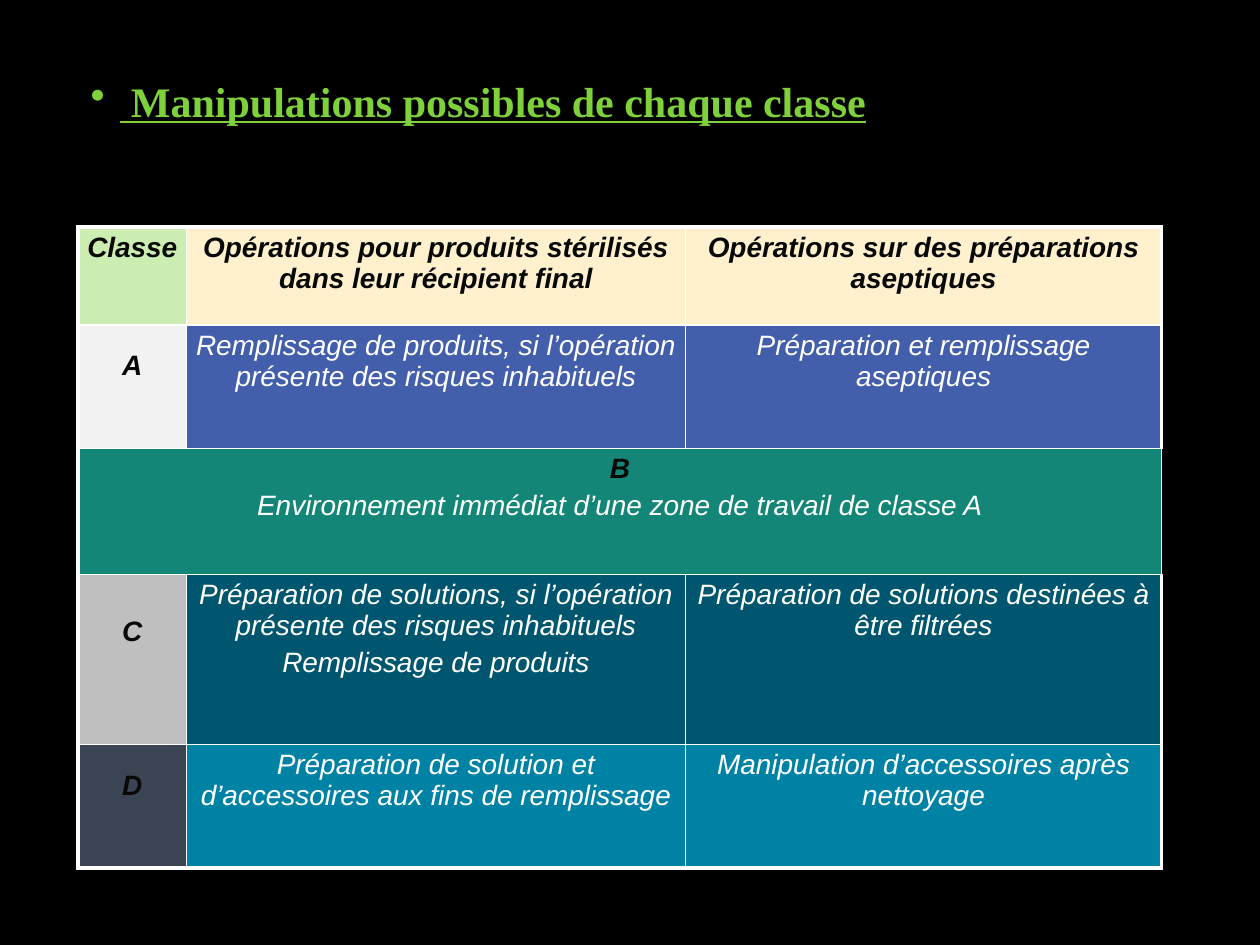
from lxml.etree import SubElement
from pptx import Presentation
from pptx.dml.color import RGBColor
from pptx.enum.text import MSO_ANCHOR, PP_ALIGN
from pptx.oxml.ns import qn
from pptx.util import Inches, Pt

WHITE = "FFFFFF"
INK = "080808"
COLUMN_WIDTHS = [0.86, 3.96, 3.78]
ROW_HEIGHTS = [0.78, 0.98, 1, 1.35, 0.98]
HEADINGS = [
    "Classe",
    "Opérations pour produits stérilisés dans leur récipient final",
    "Opérations sur des préparations aseptiques",
]
CLASS_ROWS = [
    (1, "A", "F2F2F2", "435EAA", 0.2, [
        ["Remplissage de produits, si l’opération présente des risques inhabituels"],
        ["Préparation et remplissage aseptiques"],
    ]),
    (3, "C", "BFBFBF", "00566E", 0.33, [
        ["Préparation de solutions, si l’opération présente des risques inhabituels",
         "Remplissage de produits"],
        ["Préparation de solutions destinées à être filtrées"],
    ]),
    (4, "D", "3B4453", "0082A5", 0.2, [
        ["Préparation de solution et d’accessoires aux fins de remplissage"],
        ["Manipulation d’accessoires après nettoyage"],
    ]),
]


def color(value):
    """Return the colour for a hex string."""
    return RGBColor.from_string(value)


def add_title(slide, text):
    """Format the title placeholder as an underlined bullet line."""
    title = slide.shapes.title
    title.left, title.top = Inches(0.62), Inches(0.55)
    title.width, title.height = Inches(6.72), Inches(0.5)
    frame = title.text_frame
    frame.text = text
    frame.word_wrap = True
    frame.vertical_anchor = MSO_ANCHOR.TOP
    paragraph = frame.paragraphs[0]
    paragraph.alignment = PP_ALIGN.LEFT
    font = paragraph.font
    font.name, font.size = "Times New Roman", Pt(24)
    font.bold = font.underline = True
    font.color.rgb = color("7FD13B")
    bullet = SubElement(paragraph._p.get_or_add_pPr(), qn("a:buChar"))
    bullet.set("char", "•")
    paragraph._p.pPr.insert_element_before(bullet, "a:defRPr")


def set_borders(cell, widths):
    """Draw white cell borders with the given width for each side."""
    properties = cell._tc.get_or_add_tcPr()
    for side, width in zip("LRTB", widths):
        line = SubElement(properties, qn(f"a:ln{side}"), w=str(Pt(width)))
        fill = SubElement(line, qn("a:solidFill"))
        SubElement(fill, qn("a:srgbClr"), val=WHITE)


def fill_cell(cell, lines, background, top=0.04):
    """Write centred italic lines, each a text and whether it is strong."""
    cell.fill.solid()
    cell.fill.fore_color.rgb = color(background)
    cell.margin_left = cell.margin_right = Inches(0.07)
    cell.margin_top, cell.margin_bottom = Inches(top), Inches(0.04)
    frame = cell.text_frame
    frame.text = "\n".join(text for text, _ in lines)
    for index, (paragraph, (_, strong)) in enumerate(zip(frame.paragraphs, lines)):
        paragraph.alignment = PP_ALIGN.CENTER
        paragraph.space_before = Pt(3 if index else 0)
        font = paragraph.font
        font.name, font.size = "Arial", Pt(16)
        font.italic, font.bold = True, strong
        font.color.rgb = color(INK if strong else WHITE)


def add_grid(slide):
    """Add the table with its sizes and borders and return it."""
    rows, columns = len(ROW_HEIGHTS), len(COLUMN_WIDTHS)
    table = slide.shapes.add_table(
        rows, columns, Inches(0.62), Inches(1.8),
        Inches(sum(COLUMN_WIDTHS)), Inches(sum(ROW_HEIGHTS)),
    ).table
    table.horz_banding = False
    for column, width in zip(table.columns, COLUMN_WIDTHS):
        column.width = Inches(width)
    for row, height in zip(table.rows, ROW_HEIGHTS):
        row.height = Inches(height)
    for row in range(rows):
        for column in range(columns):
            outer = (column == 0, column == columns - 1, row == 0, row == rows - 1)
            set_borders(table.cell(row, column), [2.25 if edge else 1 for edge in outer])
    return table


def add_class_table(slide):
    """Add the table of operations allowed in each class."""
    table = add_grid(slide)
    for column, heading in enumerate(HEADINGS):
        background = "FFF1CE" if column else "CCEDB1"
        fill_cell(table.cell(0, column), [(heading, True)], background)
    for row, letter, letter_fill, row_fill, top, operations in CLASS_ROWS:
        fill_cell(table.cell(row, 0), [(letter, True)], letter_fill, top)
        for column, texts in enumerate(operations, 1):
            fill_cell(table.cell(row, column), [(text, False) for text in texts], row_fill)
    table.cell(2, 0).merge(table.cell(2, 2))
    environment = "Environnement immédiat d’une zone de travail de classe A"
    fill_cell(table.cell(2, 0), [("B", True), (environment, False)], "138677")


def main():
    """Build and save the slide."""
    presentation = Presentation()
    presentation.slide_width, presentation.slide_height = Inches(10), Inches(7.5)
    slide = presentation.slides.add_slide(presentation.slide_layouts[5])
    slide.background.fill.solid()
    slide.background.fill.fore_color.rgb = color("000000")
    add_class_table(slide)
    add_title(slide, " Manipulations possibles de chaque classe")
    presentation.save("out.pptx")


if __name__ == "__main__":
    main()
